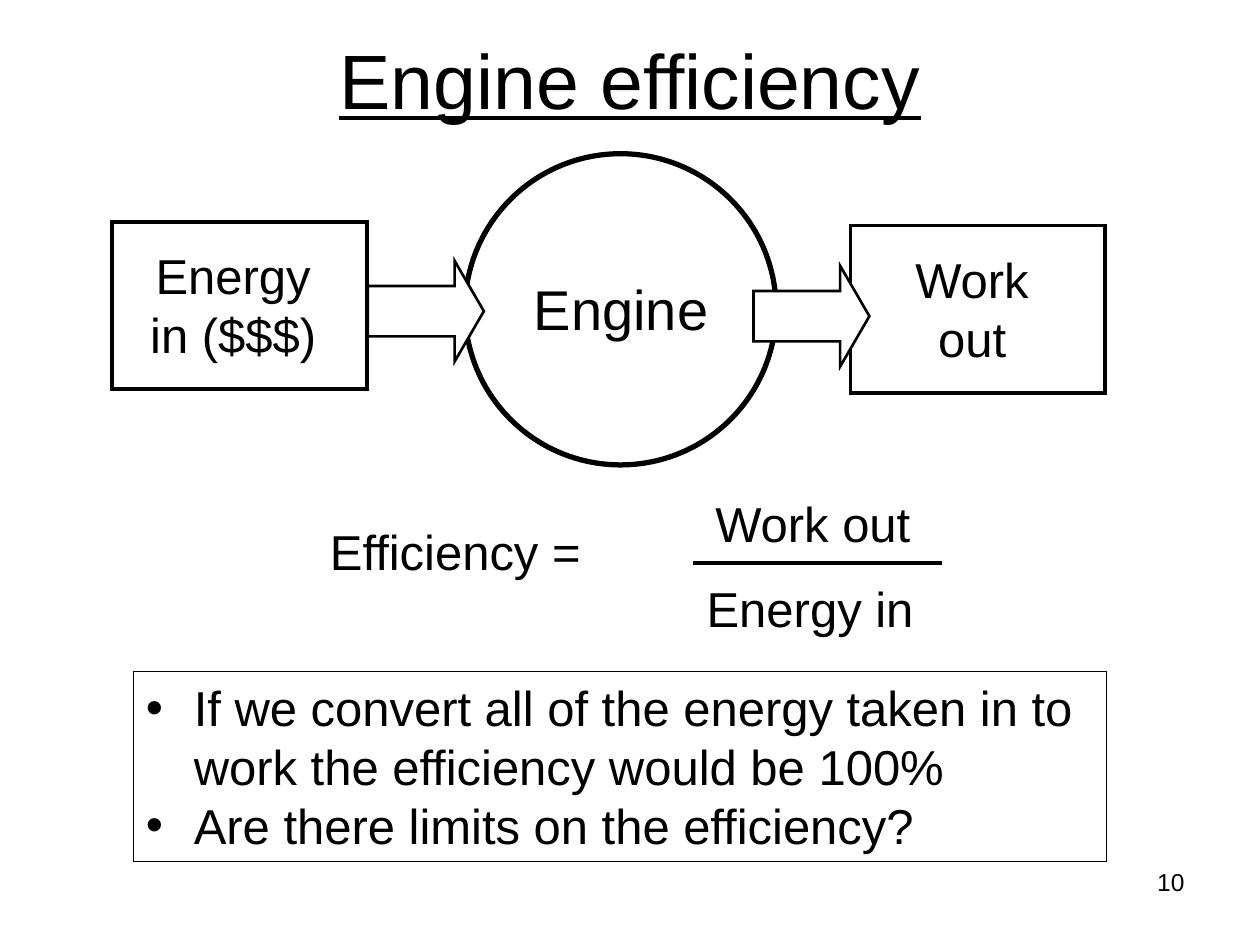
"""Build the engine efficiency slide."""
from dataclasses import dataclass

import pptx
import pptx.dml.color
import pptx.enum.shapes
import pptx.enum.text
import pptx.oxml.ns
import pptx.util
from lxml import etree

Inches = pptx.util.Inches
Pt = pptx.util.Pt
Kind = pptx.enum.shapes.MSO_SHAPE
Align = pptx.enum.text.PP_ALIGN
Anchor = pptx.enum.text.MSO_ANCHOR
Fit = pptx.enum.text.MSO_AUTO_SIZE
qn = pptx.oxml.ns.qn


@dataclass(frozen=True)
class Theme:
    """Hold the colours, font and type sizes."""
    ink = pptx.dml.color.RGBColor.from_string("000000")
    paper = pptx.dml.color.RGBColor.from_string("FFFFFF")
    font = "Arial"
    title = 44
    head = 32
    body = 28
    small = 14


THEME = Theme()


def style(target, values):
    """Set each named value on the target."""
    for name, value in values.items():
        setattr(target, name, value)


def write(shape, lines, size, align=Align.LEFT, wrap=False, anchor=Anchor.TOP, under=None):
    """Write one formatted paragraph per line."""
    frame = shape.text_frame
    frame.text = "\n".join(lines)
    fit = Fit.NONE if wrap else Fit.SHAPE_TO_FIT_TEXT
    style(frame, {"word_wrap": wrap, "vertical_anchor": anchor, "auto_size": fit})
    look = {"name": THEME.font, "size": Pt(size), "underline": under}
    for para in frame.paragraphs:
        para.alignment = align
        for run in para.runs:
            style(run.font, look)
            run.font.color.rgb = THEME.ink


def paint(shape):
    """Give the shape the paper fill."""
    shape.fill.solid()
    shape.fill.fore_color.rgb = THEME.paper


def trace(shape, width):
    """Give the shape an ink line with sharp corners."""
    shape.line.color.rgb = THEME.ink
    shape.line.width = Pt(width)
    etree.SubElement(shape.line._get_or_add_ln(), qn("a:miter"), lim="800000")


def label(shapes, box, lines, size=THEME.body, filled=False, **look):
    """Add a text box."""
    text = shapes.add_textbox(*map(Inches, box))
    write(text, lines, size, **look)
    if filled:
        paint(text)
    return text


def block(shapes, kind, box, width, filled=True):
    """Add an outlined shape."""
    shape = shapes.add_shape(kind, *map(Inches, box))
    shape.shadow.inherit = False
    if filled:
        paint(shape)
    else:
        shape.fill.background()
    trace(shape, width)
    return shape


def arrow(shapes, left, top):
    """Add a block arrow pointing right."""
    shape = block(shapes, Kind.RIGHT_ARROW, (left, top, 0.92, 0.8), 1.5)
    shape.adjustments[1] = 0.29


def rule(shapes, left, right, top):
    """Add a level line."""
    ends = map(Inches, (left, top, right, top))
    line = shapes.add_connector(pptx.enum.shapes.MSO_CONNECTOR.STRAIGHT, *ends)
    trace(line, 2.25)
    etree.SubElement(line._element.spPr, qn("a:effectLst"))


def bullet(shape, indent):
    """Give every paragraph a hanging bullet."""
    for para in shape.text_frame.paragraphs:
        props = para._p.get_or_add_pPr()
        props.set("marL", str(Inches(indent)))
        props.set("indent", str(-Inches(indent)))
        etree.SubElement(props, qn("a:buFont"), typeface=THEME.font)
        etree.SubElement(props, qn("a:buChar"), char="•")


def head(slide):
    """Format the title."""
    title = slide.shapes.title
    place = {"left": 0, "top": 0, "width": Inches(10), "height": Inches(1.25)}
    style(title, place)
    paint(title)
    write(title, ["Engine efficiency"], THEME.title, Align.CENTER, True,
          Anchor.MIDDLE, True)


def engine(slide):
    """Draw the flow from energy through the engine to work."""
    shapes = slide.shapes.add_group_shape().shapes
    block(shapes, Kind.OVAL, (3.69, 1.22, 2.47, 2.47), 3, False)
    label(shapes, (4.12, 2.13, 1.62, 0.63), ["Engine"], THEME.head, align=Align.CENTER)
    ends = [(0.89, 1.76, 1.09, 1.52, ["Energy", "in ($$$)"]),
            (6.75, 1.79, 7.16, 1.11, ["Work", "out"])]
    for left, top, start, width, lines in ends:
        block(shapes, Kind.RECTANGLE, (left, top, 2.02, 1.33), 2.25)
        label(shapes, (start, top + 0.14, width, 1.03), lines,
              filled=True, align=Align.CENTER)
    arrow(shapes, 2.92, 2.07)
    arrow(shapes, 5.98, 2.11)


def ratio(slide):
    """Set the efficiency formula as a fraction."""
    shapes = slide.shapes.add_group_shape().shapes
    parts = [(2.52, 4.09, 2.31, "Efficiency ="),
             (5.58, 3.87, 1.76, "Work out"),
             (5.51, 4.54, 1.85, "Energy in")]
    for left, top, width, text in parts:
        label(shapes, (left, top, width, 0.57), [text])
    rule(shapes, 5.5, 7.48, 4.47)


def notes(slide):
    """Add the framed bullet list."""
    lines = ["If we convert all of the energy taken in to work the efficiency would be 100%",
             "Are there limits on the efficiency?"]
    text = label(slide.shapes, (1.06, 5.33, 7.72, 1.51), lines, filled=True, wrap=True)
    trace(text, 0.75)
    bullet(text, 0.38)


def main():
    """Build and save the deck."""
    deck = pptx.Presentation()
    style(deck, {"slide_width": Inches(10), "slide_height": Inches(7.5)})
    slide = deck.slides.add_slide(deck.slide_layouts[5])
    head(slide)
    engine(slide)
    ratio(slide)
    notes(slide)
    label(slide.shapes, (7.17, 6.83, 2.33, 0.52), ["10"], THEME.small,
          align=Align.RIGHT, wrap=True)
    deck.save("out.pptx")


if __name__ == "__main__":
    main()
